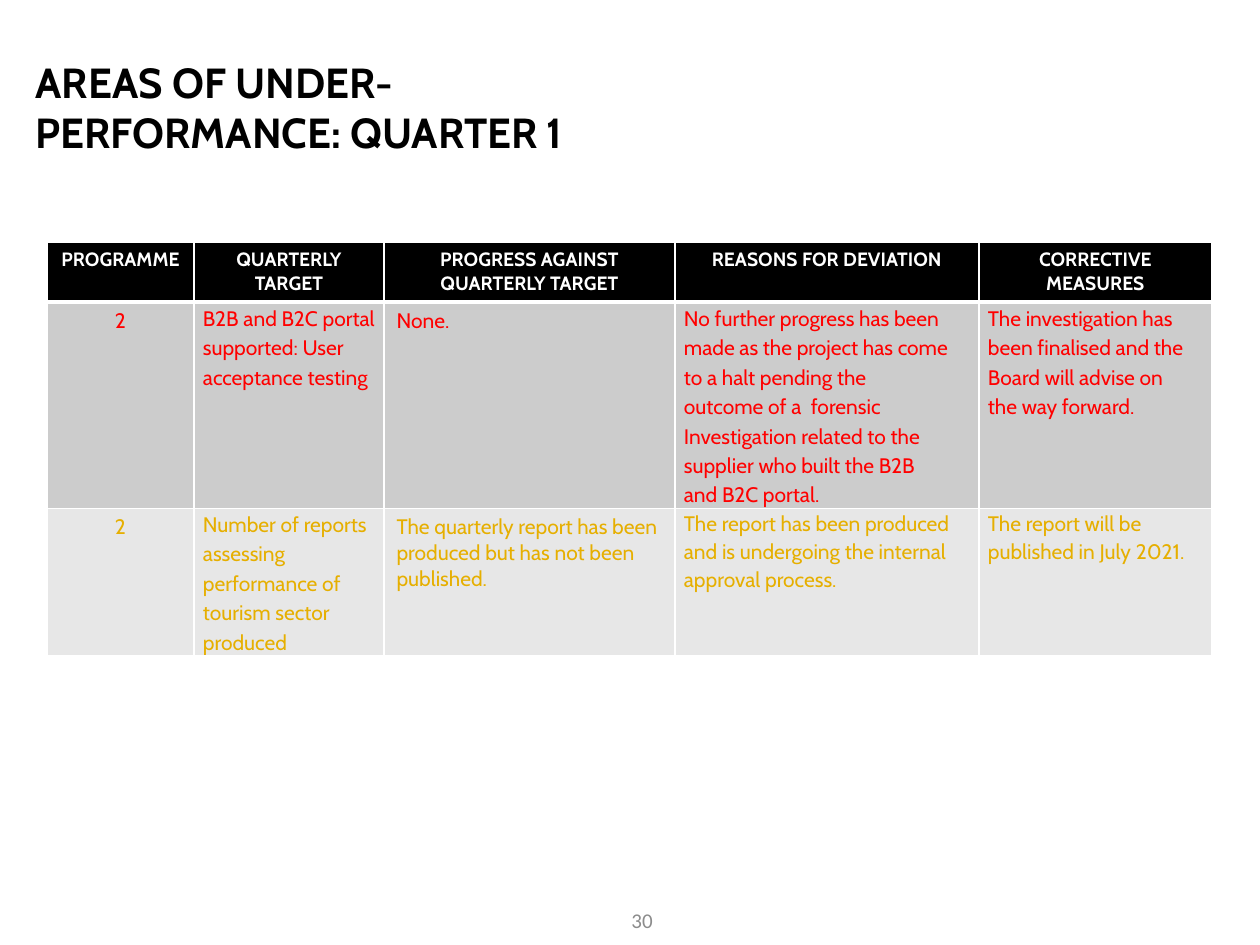
from dataclasses import dataclass

from lxml.etree import SubElement
from pptx import Presentation
from pptx.dml.color import RGBColor as Rgb
from pptx.enum.text import MSO_ANCHOR as Anchor, MSO_AUTO_SIZE as AutoSize, PP_ALIGN as Align
from pptx.oxml.ns import qn
from pptx.util import Emu, Pt

EMU_PER_PX = 914400 / 126


@dataclass(frozen=True)
class Theme:
    font: str = "Cabin"
    number_font: str = "Calibri"
    title_size: int = 24
    header_size: int = 11
    body_size: int = 12
    black: str = "000000"
    white: str = "FFFFFF"
    number_grey: str = "8C8C8C"
    overdue: str = "FF0000"
    delayed: str = "E6AF00"
    dark_band: str = "CCCCCC"
    light_band: str = "E7E7E7"


THEME = Theme()

COLUMN_WIDTHS = [147, 190, 291, 304, 233]
ROW_HEIGHTS = [60, 205, 147]
HEADERS = ["PROGRAMME", "QUARTERLY TARGET", "PROGRESS AGAINST QUARTERLY TARGET",
           "REASONS FOR DEVIATION", "CORRECTIVE MEASURES"]
PORTAL = [
    "2",
    "B2B and B2C portal supported: User acceptance testing",
    "None.",
    "No further progress has been\nmade as the project has come\nto a halt pending the\n"
    "outcome of a  forensic\nInvestigation related to the\nsupplier who built the B2B\n"
    "and B2C portal.",
    "The investigation has\nbeen finalised and the\nBoard will advise on\nthe way forward.",
]
REPORTS = [
    "2",
    "Number of reports assessing performance of tourism sector produced",
    "The quarterly report has been produced but has not been published.",
    "The report has been produced and is undergoing the internal approval process.",
    "The report will be published in July 2021.",
]
TIGHT_COLUMNS = (1, 3, 4)
NOTE_COLUMNS = (3, 4)


def px(length):
    return Emu(round(length * EMU_PER_PX))


def place(shape, left, top, width, height):
    shape.left, shape.top, shape.width, shape.height = map(px, (left, top, width, height))


def style(paragraph, size, color, bold=False, align=Align.LEFT, font=THEME.font):
    paragraph.alignment = align
    paragraph.font.name = font
    paragraph.font.size = Pt(size)
    paragraph.font.bold = bold
    paragraph.font.color.rgb = Rgb.from_string(color)


def set_borders(cell, top=1, bottom=1):
    """Draw white cell borders; widths are in points."""
    properties = cell._tc.get_or_add_tcPr()
    for side, width in (("L", 1), ("R", 1), ("T", top), ("B", bottom)):
        line = SubElement(properties, qn(f"a:ln{side}"), w=str(Pt(width)))
        fill = SubElement(line, qn("a:solidFill"))
        SubElement(fill, qn("a:srgbClr"), val=THEME.white)


def fill_cell(cell, text, band, **borders):
    set_borders(cell, **borders)
    cell.fill.solid()
    cell.fill.fore_color.rgb = Rgb.from_string(band)
    cell.text = text
    return cell.text_frame.paragraphs


def set_hanging_indent(paragraph, indent):
    properties = paragraph._p.get_or_add_pPr()
    properties.set("marL", str(px(indent)))
    properties.set("indent", str(-px(indent)))


def add_title(slide, text):
    title = slide.shapes.title
    place(title, 23, 33, 571, 147)
    frame = title.text_frame
    frame.text = text
    frame.auto_size = AutoSize.NONE
    frame.vertical_anchor = Anchor.MIDDLE
    style(frame.paragraphs[0], THEME.title_size, THEME.black, bold=True)


def fill_header(row):
    for cell, heading in zip(row.cells, HEADERS):
        for paragraph in fill_cell(cell, heading, THEME.black, bottom=3):
            style(paragraph, THEME.header_size, THEME.white, bold=True, align=Align.CENTER)


def fill_target(row, texts, color, band, top=1, spaced_notes=False):
    """Fill one target's row; its notes are either spaced or have hanging lines."""
    for column, (cell, text) in enumerate(zip(row.cells, texts)):
        tight = column in TIGHT_COLUMNS
        if tight:
            cell.margin_left = cell.margin_right = px(9)
            cell.margin_top = cell.margin_bottom = 0
        for paragraph in fill_cell(cell, text, band, top=top):
            style(paragraph, THEME.body_size, color,
                  align=Align.LEFT if column else Align.CENTER)
            if tight:
                paragraph.line_spacing = 1.15
            if column in NOTE_COLUMNS:
                if spaced_notes:
                    paragraph.line_spacing = 1.1
                    paragraph.space_before = paragraph.space_after = Pt(4)
                else:
                    set_hanging_indent(paragraph, 32)


def add_performance_table(slide):
    table = slide.shapes.add_table(
        len(ROW_HEIGHTS), len(COLUMN_WIDTHS), px(47), px(242),
        px(sum(COLUMN_WIDTHS)), px(sum(ROW_HEIGHTS))).table
    table.horz_banding = False
    for column, width in zip(table.columns, COLUMN_WIDTHS):
        column.width = px(width)
    for row, height in zip(table.rows, ROW_HEIGHTS):
        row.height = px(height)
    header, portal, reports = table.rows
    fill_header(header)
    fill_target(portal, PORTAL, THEME.overdue, THEME.dark_band, top=3)
    fill_target(reports, REPORTS, THEME.delayed, THEME.light_band, spaced_notes=True)


def add_page_number(slide, number):
    frame = slide.shapes.add_textbox(px(372), px(895), px(293), px(50)).text_frame
    frame.word_wrap = True
    frame.vertical_anchor = Anchor.MIDDLE
    frame.text = number
    style(frame.paragraphs[0], THEME.body_size, THEME.number_grey,
          align=Align.RIGHT, font=THEME.number_font)


def main():
    deck = Presentation()
    deck.slide_width, deck.slide_height = px(1260), px(945)
    slide = deck.slides.add_slide(deck.slide_layouts.get_by_name("Title Only"))
    add_title(slide, "AREAS OF UNDER-PERFORMANCE: QUARTER 1")
    add_performance_table(slide)
    add_page_number(slide, "30")
    deck.save("out.pptx")


if __name__ == "__main__":
    main()
